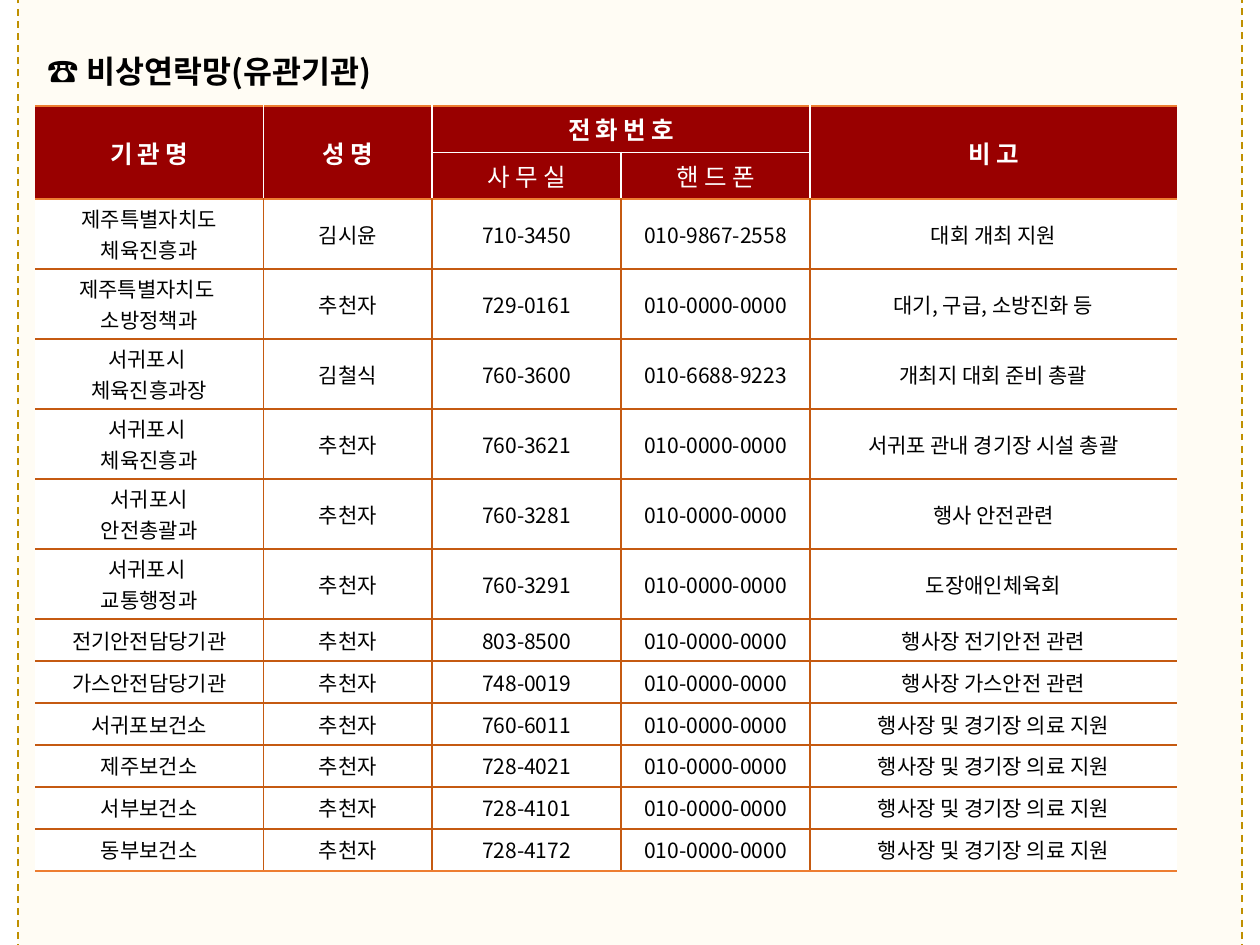
from lxml import etree
from pptx import Presentation, util as u
from pptx.dml.color import RGBColor
from pptx.enum import dml, shapes, text
from pptx.oxml import ns

FONT = "Noto Sans CJK KR"
INK = {
    "cream": "FFF6DD", "gold": "BF9000", "red": "990000", "white": "FFFFFF",
    "black": "000000", "rust": "C55A11", "edge": "ED7D31",
}
TITLE = "☎ 비상연락망(유관기관)"
NAME, CELL = "추천자", "010-0000-0000"
AID = "행사장 및 경기장 의료 지원"
HEAD = [
    ("기관명", "성명", "전화번호", "", "비고"),
    ("", "", "사무실", "핸드폰", ""),
]
SPANS = [(0, 0, 1, 0), (0, 1, 1, 1), (0, 2, 0, 3), (0, 4, 1, 4)]
BODY = [
    ("제주특별자치도\n체육진흥과", "김시윤", "710-3450", "010-9867-2558", "대회 개최 지원"),
    ("제주특별자치도 \n소방정책과", NAME, "729-0161", CELL, "대기, 구급, 소방진화 등"),
    ("서귀포시 \n체육진흥과장", "김철식", "760-3600", "010-6688-9223", "개최지 대회 준비 총괄"),
    ("서귀포시 \n체육진흥과", NAME, "760-3621", CELL, "서귀포 관내 경기장 시설 총괄"),
    ("서귀포시\n안전총괄과", NAME, "760-3281", CELL, "행사 안전관련"),
    ("서귀포시 \n교통행정과", NAME, "760-3291", CELL, "도장애인체육회"),
    ("전기안전담당기관", NAME, "803-8500", CELL, "행사장 전기안전 관련"),
    ("가스안전담당기관", NAME, "748-0019", CELL, "행사장 가스안전 관련"),
    ("서귀포보건소", NAME, "760-6011", CELL, AID),
    ("제주보건소", NAME, "728-4021", CELL, AID),
    ("서부보건소", NAME, "728-4101", CELL, AID),
    ("동부보건소", NAME, "728-4172", CELL, AID),
]
ROWS = HEAD + BODY
COLS = [1.81, 1.34, 1.5, 1.5, 2.91]
TOP = len(HEAD)
HIGH = [0.37] * TOP + [5 / 9 if "\n" in row[0] else 1 / 3 for row in BODY]


def tint(key):
    return RGBColor.from_string(INK[key])


def sub(node, tag, **attrs):
    return etree.SubElement(node, ns.qn(tag), attrs)


def style(frame, size, key, bold=False, gap=0, align=text.PP_ALIGN.LEFT):
    for para in frame.paragraphs:
        para.alignment = align
        for run in para.runs:
            font = run.font
            font.size, font.bold, font.name = u.Pt(size), bold, FONT
            font.color.rgb = tint(key)
            props = run._r.get_or_add_rPr()
            props.set("spc", str(gap * 100))
            sub(props, "a:ea", typeface=FONT)


def rule_h(row):
    if row in (0, TOP, len(ROWS)):
        return "edge"
    return "white" if row < TOP else "rust"


def rule_v(row, col):
    if col in (0, len(COLS)):
        return None
    return "white" if row < TOP else "rust"


def border(cell, row, col):
    tall = cell.span_height if cell.is_merge_origin else 1
    wide = cell.span_width if cell.is_merge_origin else 1
    sides = {
        "L": rule_v(row, col), "R": rule_v(row, col + wide),
        "T": rule_h(row), "B": rule_h(row + tall),
    }
    props = cell._tc.get_or_add_tcPr()
    for side, key in sides.items():
        line = sub(props, "a:ln" + side, w=str(u.Pt(1)))
        if key:
            sub(sub(line, "a:solidFill"), "a:srgbClr", val=INK[key])
        else:
            sub(line, "a:noFill")


def add_panel(slide):
    panel = slide.shapes.add_shape(
        shapes.MSO_SHAPE.RECTANGLE, *map(u.Inches, (0.14, -0.11, 9.72, 7.72)))
    panel.shadow.inherit = False
    panel.fill.solid()
    panel.fill.fore_color.rgb = tint("cream")
    color = panel.element.spPr.find(".//" + ns.qn("a:srgbClr"))
    sub(color, "a:alpha", val="30000")
    panel.line.color.rgb = tint("gold")
    panel.line.width = u.Pt(1)
    panel.line.dash_style = dml.MSO_LINE.DASH
    return panel


def add_title(slide):
    title = slide.shapes.title
    title.left, title.top, title.width, title.height = map(
        u.Inches, (0.28, 0.36, 9.37, 0.4))
    frame = title.text_frame
    frame.text = TITLE
    frame.word_wrap = True
    frame.auto_size = text.MSO_AUTO_SIZE.SHAPE_TO_FIT_TEXT
    frame.vertical_anchor = text.MSO_ANCHOR.TOP
    style(frame, 18, "black", True)
    return title


def add_list(slide):
    table = slide.shapes.add_table(
        len(ROWS), len(COLS), u.Inches(0.28), u.Inches(0.84),
        u.Inches(sum(COLS)), u.Inches(sum(HIGH))).table
    table.first_row = table.horz_banding = False
    for col, wide in zip(table.columns, COLS):
        col.width = u.Inches(wide)
    for row, tall in zip(table.rows, HIGH):
        row.height = u.Inches(tall)
    for r1, c1, r2, c2 in SPANS:
        table.cell(r1, c1).merge(table.cell(r2, c2))
    for r, row in enumerate(ROWS):
        for c, words in enumerate(row):
            cell = table.cell(r, c)
            if cell.is_spanned:
                continue
            head = r < TOP
            border(cell, r, c)
            cell.fill.solid()
            cell.fill.fore_color.rgb = tint("red" if head else "white")
            cell.vertical_anchor = text.MSO_ANCHOR.MIDDLE
            cell.margin_top = cell.margin_bottom = u.Inches(0.03)
            cell.text_frame.text = words
            size, key, gap = (14, "white", 3) if head else (12, "black", 0)
            style(cell.text_frame, size, key, r == 0, gap, text.PP_ALIGN.CENTER)


def main():
    deck = Presentation()
    deck.slide_width, deck.slide_height = u.Inches(10), u.Inches(7.5)
    slide = deck.slides.add_slide(deck.slide_layouts[5])
    title = add_title(slide)
    title.element.addprevious(add_panel(slide).element)
    add_list(slide)
    deck.save("out.pptx")


if __name__ == "__main__":
    main()
